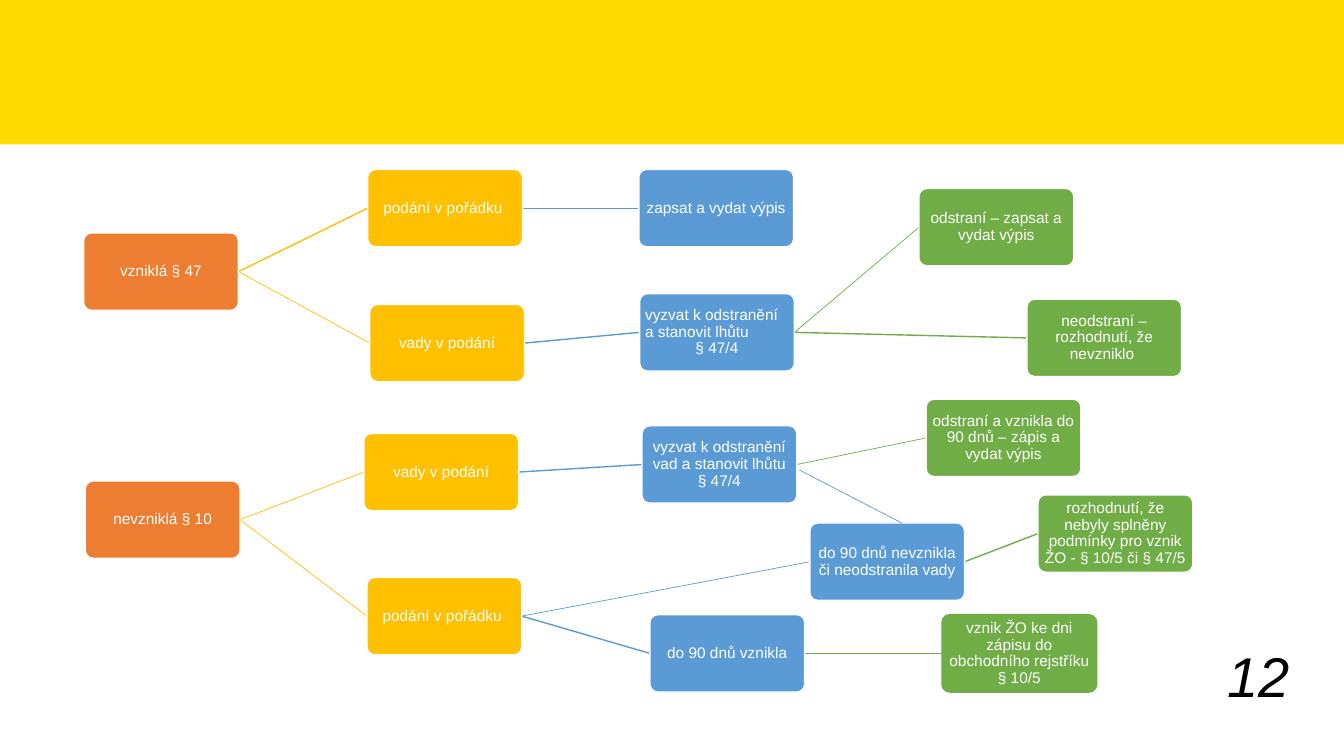
"""Build the decision tree for trade licence filings."""
from lxml.etree import SubElement
from pptx import Presentation
from pptx.dml.color import RGBColor
from pptx.enum.shapes import MSO_CONNECTOR, MSO_SHAPE
from pptx.enum.text import MSO_ANCHOR, PP_ALIGN
from pptx.oxml.ns import qn
from pptx.util import Cm, Pt

HEX = {"band": "FFD900", "root": "ED7D31", "state": "FFC000", "step": "5B9BD5",
       "end": "70AD47", "white": "FFFFFF", "black": "000000"}
FONT = "Arial"
WIDE, HIGH = 3.9, 1.95

NODES = {
    "old": ("root", 2.11, 5.87, "vzniklá § 47"),
    "old ok": ("state", 9.27, 4.27, "podání v pořádku "),
    "enter": ("step", 16.1, 4.27, "zapsat a vydat výpis"),
    "old bad": ("state", 9.32, 7.67, "vady v podání"),
    "old call": ("step", 16.12, 7.4, "vyzvat k odstranění a stanovit lhůtu\n§ 47/4"),
    "fixed": ("end", 23.16, 4.75, "odstraní – zapsat a vydat výpis"),
    "not fixed": ("end", 25.88, 7.54, "neodstraní – rozhodnutí, že nevzniklo "),
    "new": ("root", 2.15, 12.12, "nevzniklá § 10"),
    "new bad": ("state", 9.17, 10.92, "vady v podání"),
    "new call": ("step", 16.18, 10.73, "vyzvat k odstranění vad a stanovit lhůtu\n§ 47/4"),
    "in time": ("end", 23.34, 10.06, "odstraní a vznikla do 90 dnů – zápis a vydat výpis"),
    "new ok": ("state", 9.25, 14.55, "podání v pořádku "),
    "late": ("step", 20.41, 13.18, "do 90 dnů nevznikla či neodstranila vady"),
    "refuse": ("end", 26.16, 12.47,
               "rozhodnutí, že nebyly splněny podmínky pro vznik ŽO - § 10/5 či § 47/5"),
    "born": ("step", 16.38, 15.49, "do 90 dnů vznikla"),
    "licence": ("end", 23.74, 15.49,
                "vznik ŽO ke dni zápisu do obchodního rejstříku § 10/5"),
}
LINKS = [
    ("old", "old ok", 1), ("old", "old bad", 0.5), ("old ok", "enter", 0.5),
    ("old bad", "old call", 1), ("old call", "fixed", 0.5),
    ("old call", "not fixed", 1), ("new", "new bad", 0.5), ("new", "new ok", 0.5),
    ("new bad", "new call", 1), ("new call", "in time", 0.5),
    ("new ok", "late", 0.5), ("new ok", "born", 1), ("late", "refuse", 1),
    ("born", "licence", 0.5),
]
SIDE = (20.14, 11.84, 22.73, 13.18)


def color(name):
    return RGBColor.from_string(HEX[name])


def style(frame, size, tint, align, slant=False):
    frame.word_wrap = True
    for para in frame.paragraphs:
        para.alignment = align
        for run in para.runs:
            font = run.font
            font.name, font.size, font.italic = FONT, Pt(size), slant
            font.color.rgb = color(tint)


def add_box(slide, kind, left, top, text):
    box = slide.shapes.add_shape(MSO_SHAPE.ROUNDED_RECTANGLE,
                                 Cm(left), Cm(top), Cm(WIDE), Cm(HIGH))
    box.adjustments[0] = 0.1
    box.shadow.inherit = False
    box.fill.solid()
    box.fill.fore_color.rgb = color(kind)
    box.line.color.rgb = color("white")
    box.line.width = Pt(1)
    frame = box.text_frame
    frame.text = text
    frame.vertical_anchor = MSO_ANCHOR.MIDDLE
    frame.margin_left = frame.margin_right = Cm(0.08)
    frame.margin_top = frame.margin_bottom = Cm(0.08)
    style(frame, 11, "white", PP_ALIGN.CENTER)
    for para in frame.paragraphs:
        para.line_spacing = 0.9
    return box


def add_link(slide, tint, width, ends=(0, 0, 0, 0)):
    link = slide.shapes.add_connector(MSO_CONNECTOR.STRAIGHT, *map(Cm, ends))
    link.line.color.rgb = color(tint)
    link.line.width = Pt(width)
    SubElement(link.element.spPr, qn("a:effectLst"))
    return link


def main():
    deck = Presentation()
    deck.slide_width, deck.slide_height = Cm(33.87), Cm(19.05)
    slide = deck.slides.add_slide(deck.slide_layouts[6])

    band = slide.shapes.add_shape(MSO_SHAPE.RECTANGLE, 0, 0, deck.slide_width, Cm(3.64))
    band.shadow.inherit = False
    band.fill.solid()
    band.fill.fore_color.rgb = color("band")
    band.line.fill.background()

    boxes = {name: add_box(slide, *node) for name, node in NODES.items()}
    boxes["licence"].line.color.rgb = color("end")
    boxes["old call"].text_frame.paragraphs[0].alignment = PP_ALIGN.LEFT

    for start, stop, width in LINKS:
        link = add_link(slide, NODES[stop][0], width)
        link.begin_connect(boxes[start], 3)
        link.end_connect(boxes[stop], 1)
        band.element.addnext(link.element)
    add_link(slide, "step", 0.5, SIDE)

    page = slide.shapes.add_textbox(Cm(25.12), Cm(16.54), Cm(7.62), Cm(1.45))
    page.text_frame.text = "12"
    page.text_frame.vertical_anchor = MSO_ANCHOR.BOTTOM
    style(page.text_frame, 40, "black", PP_ALIGN.RIGHT, True)

    deck.save("out.pptx")


if __name__ == "__main__":
    main()
